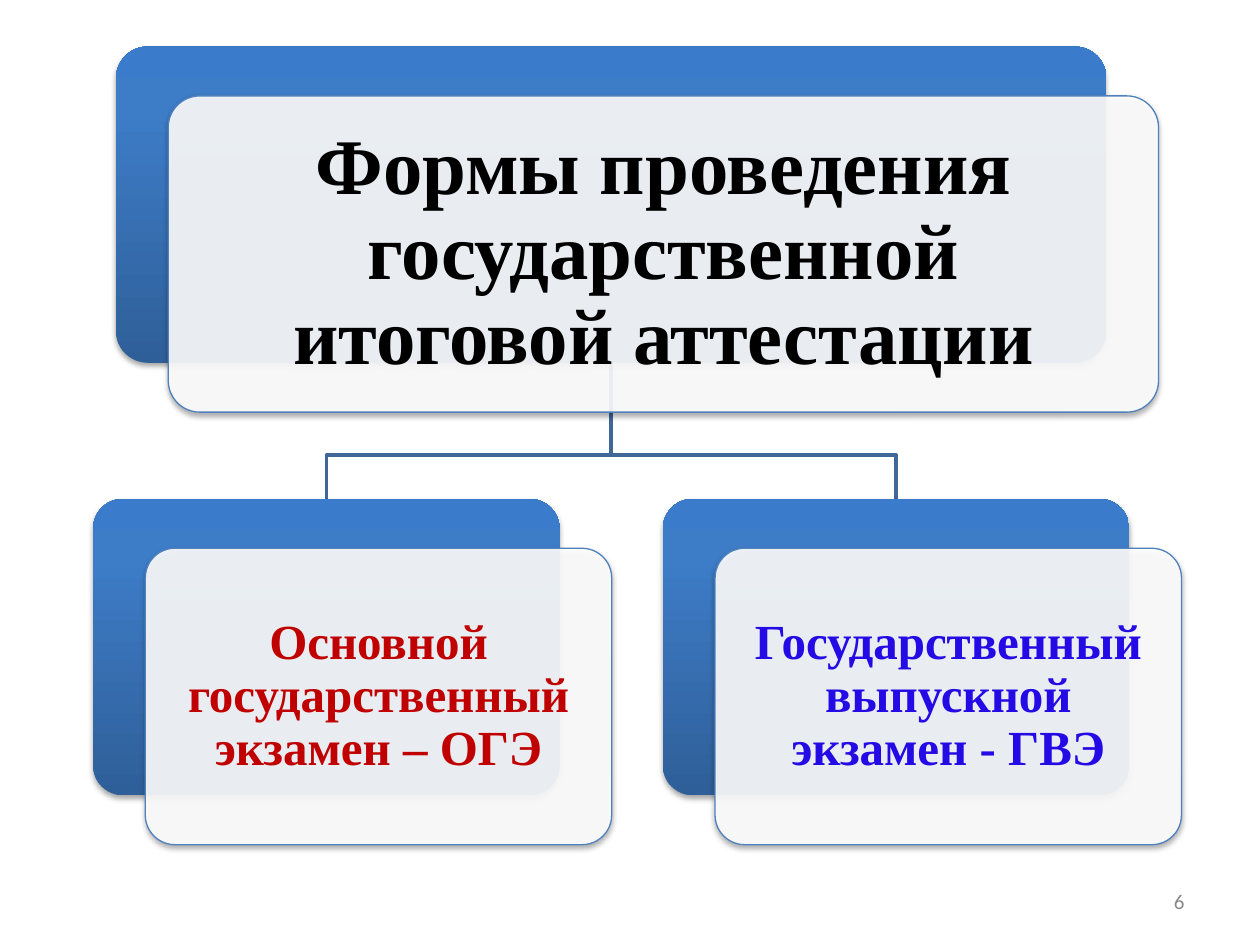
"""Build a slide showing the two forms of state final assessment as a tree."""
from copy import deepcopy

from lxml import etree
from pptx import Presentation
from pptx.dml.color import RGBColor
from pptx.enum import shapes, text
from pptx.oxml.ns import qn
from pptx.util import Pt

ROOT = "Формы проведения государственной итоговой аттестации"
FORMS = [
    ("Основной государственный экзамен – ОГЭ", "C00000"),
    ("Государственный выпускной экзамен - ГВЭ", "240AE4"),
]
PAGE = "6"

THEME = {
    "font": "Times New Roman", "page_font": "Calibri",
    "root_size": 45, "form_size": 28, "page_size": 12,
    "root_ink": "000000", "page_ink": "898989",
    "card": "FFFFFF", "card_alpha": 90, "border": "4F81BD", "branch": "3F6797",
    "gradient": [(0, "2F5F99"), (0.8, "3D7CC7"), (1, "3A7CCB")],
    "shadow": "000000", "shadow_alpha": 35,
}

CENTER = 349.3
ROOT_TOP, ROOT_W, ROOT_H = 26.6, 565.9, 180.7
FORM_TOP, FORM_W, FORM_H = 285.1, 266.5, 169.4
FORM_STEP = 325.6
CARD_DX, CARD_DY = 29.8, 28.2
BEND_Y = 260


def rgb(code):
    return RGBColor.from_string(code)


def add_alpha(color, percent):
    etree.SubElement(color, qn("a:alpha"), val=str(percent * 1000))


def cast_shadow(shape):
    shape.shadow.inherit = False
    effects = shape._element.spPr.find(qn("a:effectLst"))
    shadow = etree.SubElement(
        effects, qn("a:outerShdw"), blurRad=str(Pt(3.1)), dist=str(Pt(1.8)),
        dir="5400000", rotWithShape="0")
    color = etree.SubElement(shadow, qn("a:srgbClr"), val=THEME["shadow"])
    add_alpha(color, THEME["shadow_alpha"])


def write(frame, words, font, size, ink, align, bold=False):
    frame.word_wrap = True
    frame.vertical_anchor = text.MSO_ANCHOR.MIDDLE
    paragraph = frame.paragraphs[0]
    paragraph.alignment = align
    run = paragraph.add_run()
    run.text = words
    run.font.name, run.font.size, run.font.bold = font, Pt(size), bold
    run.font.color.rgb = rgb(ink)
    return paragraph


def add_rounded(slide, left, top, width, height):
    shape = slide.shapes.add_shape(
        shapes.MSO_SHAPE.ROUNDED_RECTANGLE, Pt(left), Pt(top), Pt(width), Pt(height))
    shape.adjustments[0] = 0.1
    cast_shadow(shape)
    return shape


def add_node(slide, left, top, width, height, words, size, ink, inset):
    plate = add_rounded(slide, left, top, width, height)
    plate.line.fill.background()
    plate.fill.gradient()
    plate.fill.gradient_angle = 90
    stops = plate._element.spPr.find(qn("a:gradFill")).find(qn("a:gsLst"))
    stops.insert(1, deepcopy(stops[0]))
    for stop, (position, code) in zip(plate.fill.gradient_stops, THEME["gradient"]):
        stop.position = position
        stop.color.rgb = rgb(code)

    card = add_rounded(slide, left + CARD_DX, top + CARD_DY, width, height)
    card.fill.solid()
    card.fill.fore_color.rgb = rgb(THEME["card"])
    add_alpha(card._element.spPr.find(qn("a:solidFill"))[0], THEME["card_alpha"])
    card.line.color.rgb = rgb(THEME["border"])
    card.line.width = Pt(0.75)
    frame = card.text_frame
    frame.margin_left = frame.margin_right = Pt(inset)
    frame.margin_top = frame.margin_bottom = Pt(inset)
    label = write(frame, words, THEME["font"], size, ink, text.PP_ALIGN.CENTER, True)
    label.line_spacing = 0.9


def add_branch(slide, end_x):
    start_y = ROOT_TOP + ROOT_H
    builder = slide.shapes.build_freeform(Pt(CENTER), Pt(start_y))
    corners = [(CENTER, BEND_Y), (end_x, BEND_Y), (end_x, FORM_TOP)]
    builder.add_line_segments([(Pt(x), Pt(y)) for x, y in corners], close=False)
    branch = builder.convert_to_shape()
    branch.shadow.inherit = False
    branch.fill.background()
    branch.line.color.rgb = rgb(THEME["branch"])
    branch.line.width = Pt(2)


def main():
    deck = Presentation()
    deck.slide_width, deck.slide_height = Pt(720), Pt(540)
    slide = deck.slides.add_slide(deck.slide_layouts[6])

    centers = [CENTER + (i - (len(FORMS) - 1) / 2) * FORM_STEP for i in range(len(FORMS))]
    for center in centers:
        add_branch(slide, center)
    add_node(slide, CENTER - ROOT_W / 2, ROOT_TOP, ROOT_W, ROOT_H,
             ROOT, THEME["root_size"], THEME["root_ink"], 13.5)
    for center, (words, ink) in zip(centers, FORMS):
        add_node(slide, center - FORM_W / 2, FORM_TOP, FORM_W, FORM_H,
                 words, THEME["form_size"], ink, 8.4)

    page = slide.shapes.add_textbox(Pt(516), Pt(500.5), Pt(168), Pt(28.75))
    write(page.text_frame, PAGE, THEME["page_font"], THEME["page_size"],
          THEME["page_ink"], text.PP_ALIGN.RIGHT)
    deck.save("out.pptx")


if __name__ == "__main__":
    main()
